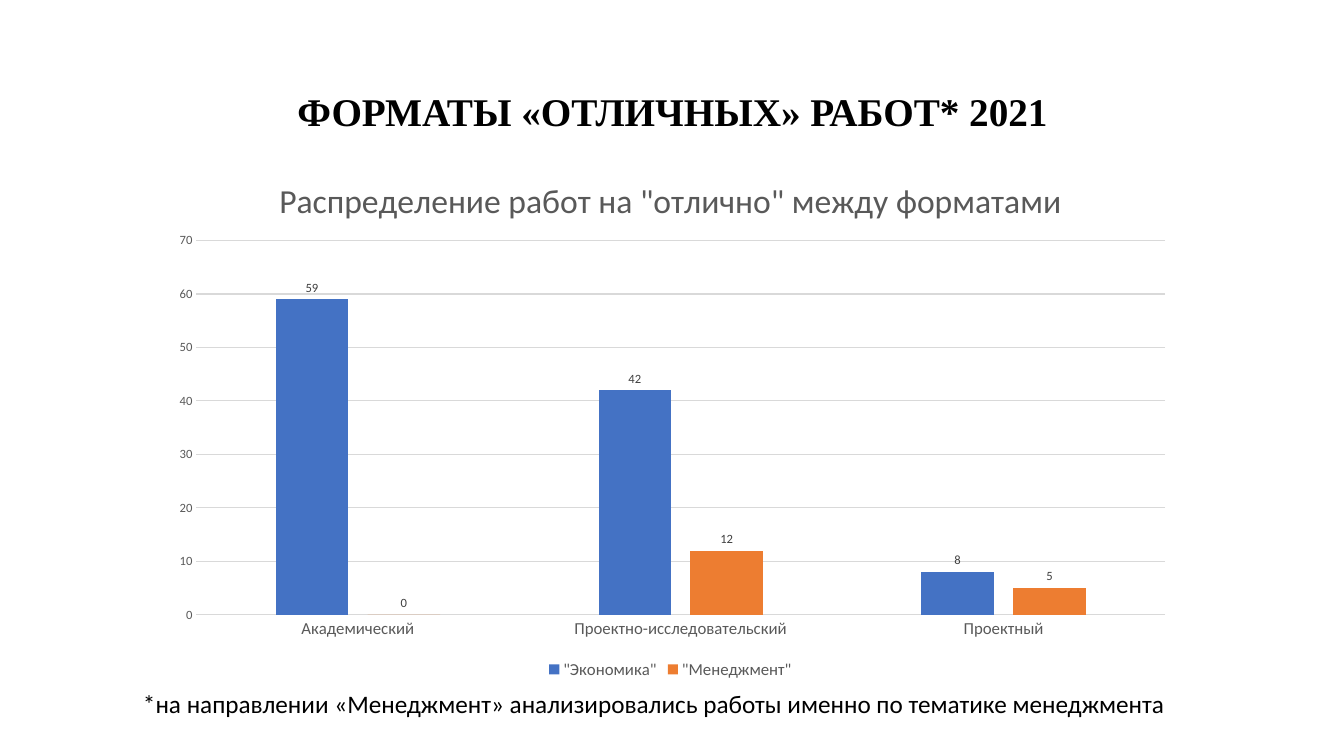
"""Build a slide comparing the formats of excellent student works in 2021."""
import pptx
import pptx.chart.data
import pptx.dml.color
import pptx.enum.chart
import pptx.enum.text
import pptx.oxml
import pptx.util

Inches = pptx.util.Inches
Pt = pptx.util.Pt
GREY, RULE = "595959", "D9D9D9"


def colour(code):
    return pptx.dml.color.RGBColor.from_string(code)


def style(font, size, code, name="Calibri", bold=False):
    font.size, font.name, font.bold = Pt(size), name, bold
    font.color.rgb = colour(code)


deck = pptx.Presentation()
deck.slide_width, deck.slide_height = Inches(13.33), Inches(7.5)
page = deck.slides.add_slide(deck.slide_layouts[6])

texts = [
    ("ФОРМАТЫ «ОТЛИЧНЫХ» РАБОТ* 2021", (0.92, 0.4, 11.5, 1.45),
     28, "Times New Roman", True, "CENTER", "MIDDLE", 0.9),
    ("*на направлении «Менеджмент» анализировались работы именно по тематике менеджмента",
     (1.32, 6.78, 10.86, 0.4), 18, "Calibri", False, "LEFT", "TOP", 1.0),
]
for words, place, size, name, bold, align, anchor, spacing in texts:
    box = page.shapes.add_textbox(*map(Inches, place))
    frame = box.text_frame
    frame.word_wrap = True
    frame.vertical_anchor = pptx.enum.text.MSO_ANCHOR[anchor]
    frame.text = words
    para = frame.paragraphs[0]
    para.alignment = pptx.enum.text.PP_ALIGN[align]
    para.line_spacing = spacing
    style(para.runs[0].font, size, "000000", name, bold)

data = pptx.chart.data.CategoryChartData()
data.categories = ["Академический", "Проектно-исследовательский", "Проектный"]
data.add_series('"Экономика"', (59, 42, 8))
data.add_series('"Менеджмент"', (0, 12, 5))
chart = page.shapes.add_chart(
    pptx.enum.chart.XL_CHART_TYPE.COLUMN_CLUSTERED,
    *map(Inches, (1.54, 1.55, 10.22, 5.23)), data).chart
style(chart.font, 10, "000000")

chart.has_title = True
title = chart.chart_title
title.include_in_layout = False
title.text_frame.text = 'Распределение работ на "отлично" между форматами'
style(title.text_frame.paragraphs[0].runs[0].font, 24, GREY)

chart.has_legend = True
chart.legend.position = pptx.enum.chart.XL_LEGEND_POSITION.BOTTOM
chart.legend.include_in_layout = False
style(chart.legend.font, 12, GREY)

for axis, size in ((chart.category_axis, 12), (chart.value_axis, 9)):
    axis.major_tick_mark = axis.minor_tick_mark = pptx.enum.chart.XL_TICK_MARK.NONE
    style(axis.tick_labels.font, size, GREY)
chart.value_axis.minimum_scale = 0
chart.value_axis.maximum_scale = 70
chart.value_axis.major_unit = 10
chart.value_axis.has_major_gridlines = True
chart.value_axis.format.line.fill.background()
for line in (chart.category_axis.format.line, chart.value_axis.major_gridlines.format.line):
    line.color.rgb = colour(RULE)
    line.width = Pt(0.75)

plot = chart.plots[0]
plot.gap_width, plot.overlap, plot.vary_by_categories = 219, -27, False
for series, code in zip(plot.series, ("4472C4", "ED7D31")):
    series.format.fill.solid()
    series.format.fill.fore_color.rgb = colour(code)
    series.invert_if_negative = False
    labels = series.data_labels
    labels.show_value = True
    labels.position = pptx.enum.chart.XL_LABEL_POSITION.OUTSIDE_END
    style(labels.font, 9, "404040")

namespace = "http://schemas.openxmlformats.org/drawingml/2006/chart"
area = chart.element.find(f".//{{{namespace}}}plotArea")
for old in area.findall(f"{{{namespace}}}layout"):
    area.remove(old)
area.insert(0, pptx.oxml.parse_xml(
    f'<c:layout xmlns:c="{namespace}"><c:manualLayout><c:layoutTarget val="inner"/>'
    '<c:xMode val="edge"/><c:yMode val="edge"/><c:x val="0.04"/><c:y val="0.16"/>'
    '<c:w val="0.94"/><c:h val="0.71"/></c:manualLayout></c:layout>'))

deck.save("out.pptx")
